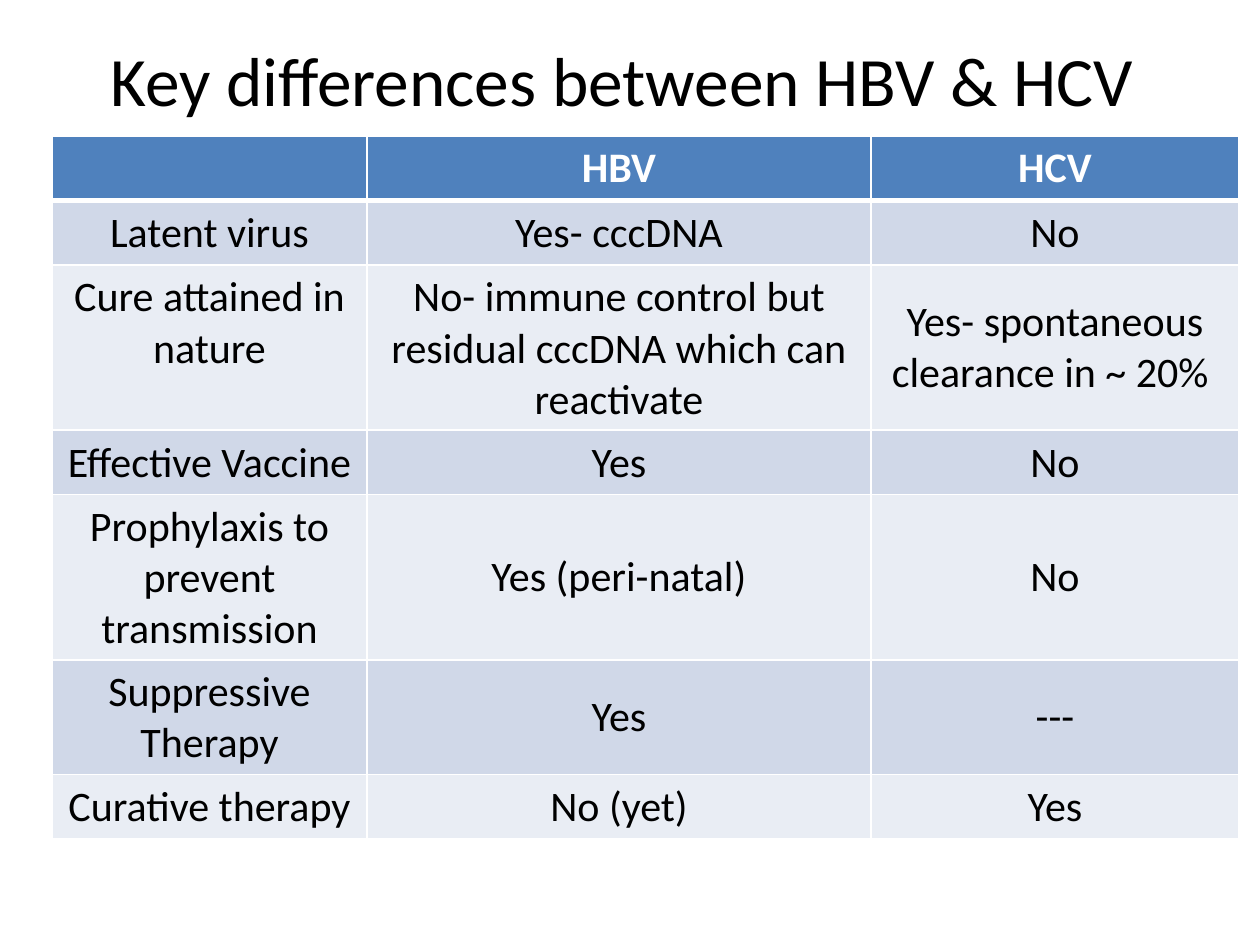
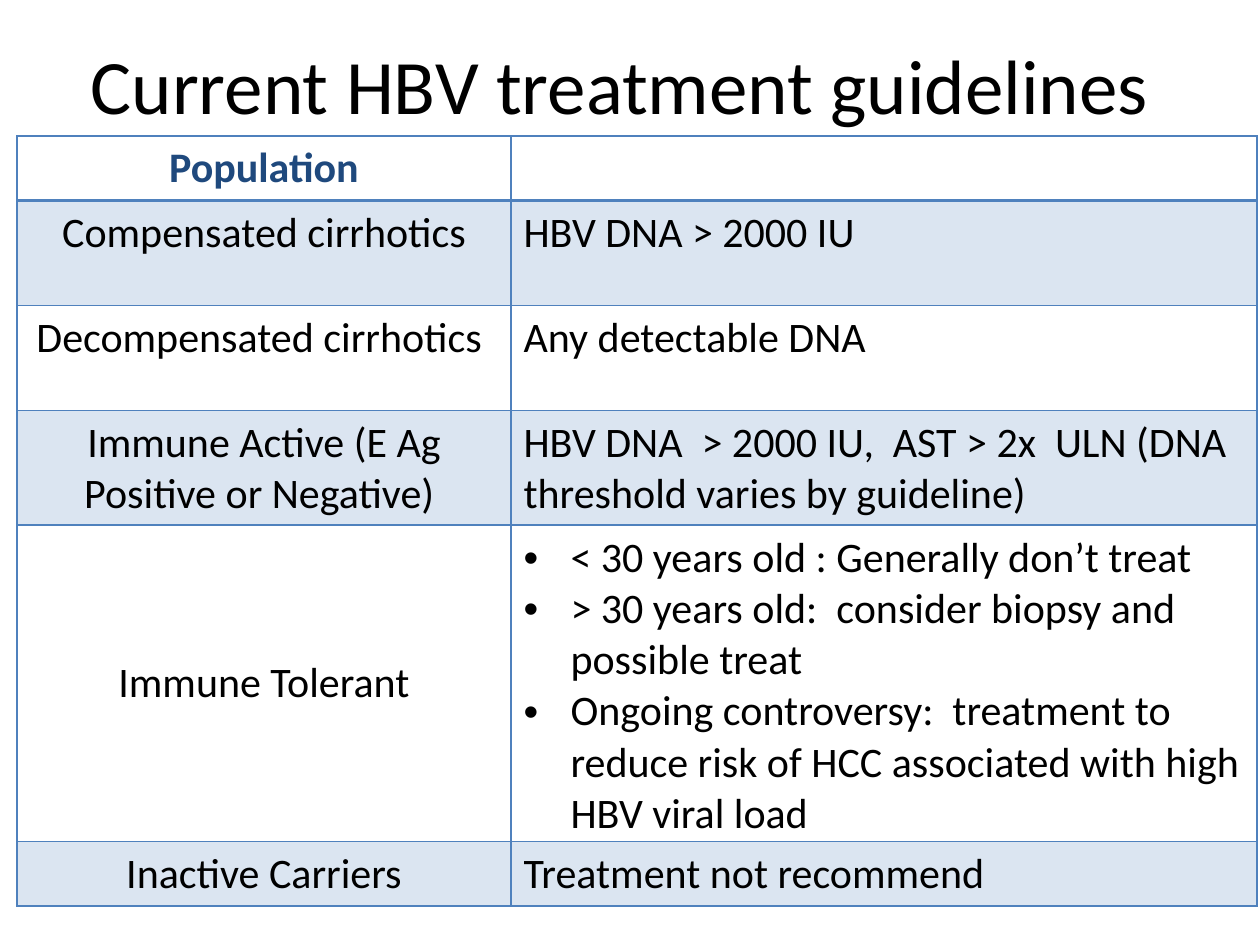
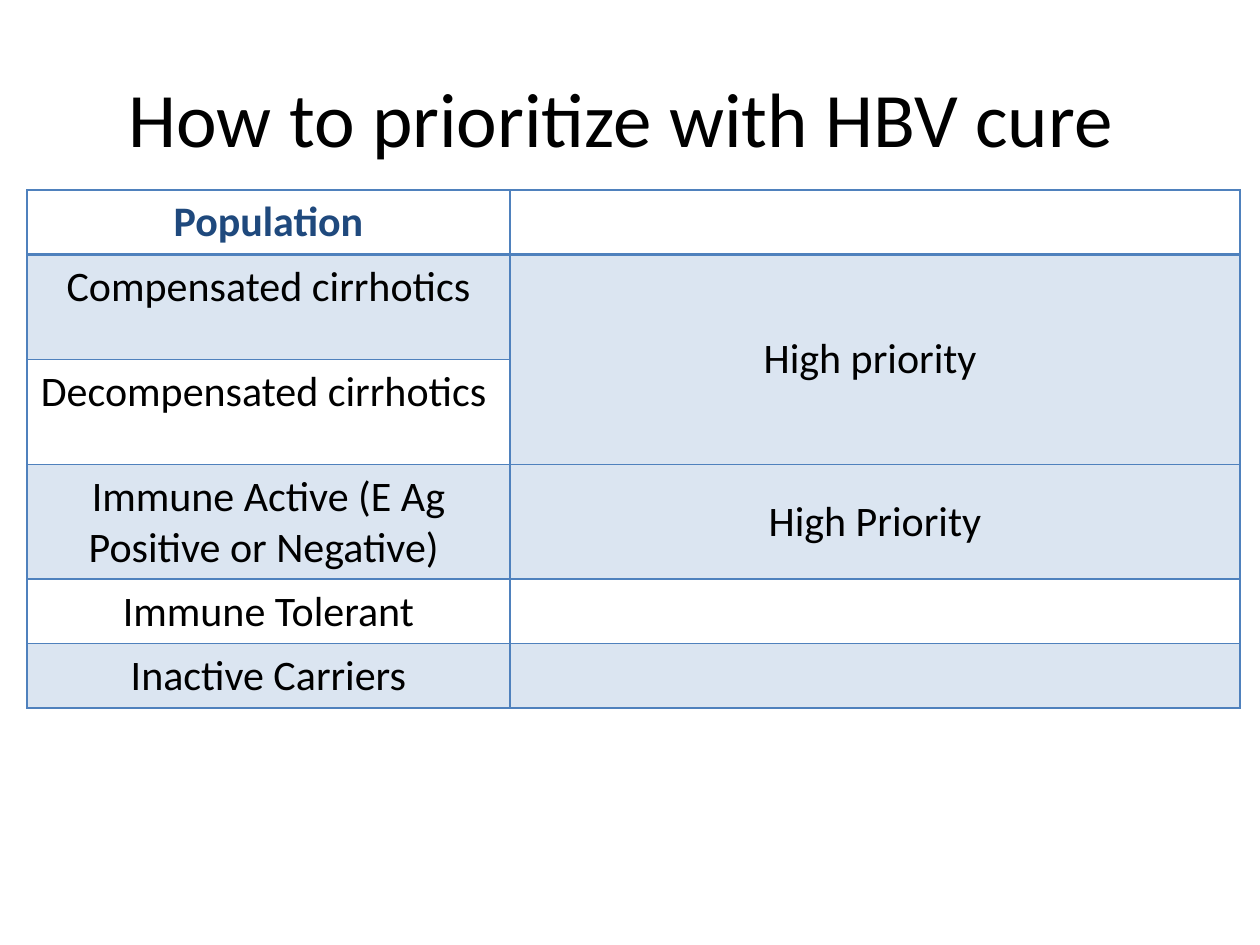
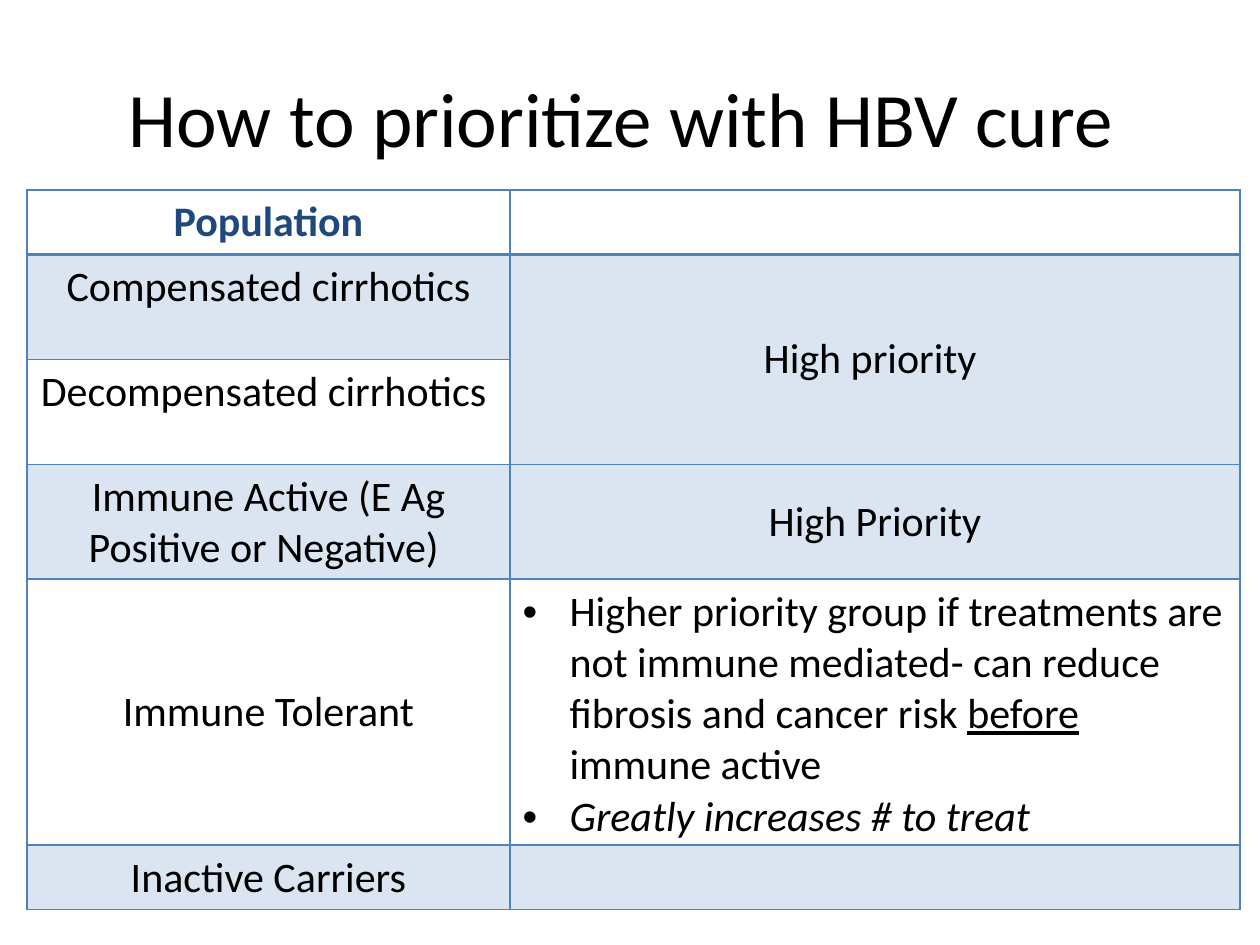
from dataclasses import dataclass

from lxml import etree
from pptx import Presentation
from pptx.dml.color import RGBColor
from pptx.enum.text import MSO_ANCHOR, PP_ALIGN
from pptx.oxml.ns import qn
from pptx.util import Emu, Pt

TOP, MIDDLE = MSO_ANCHOR.TOP, MSO_ANCHOR.MIDDLE
LEFT, CENTER = PP_ALIGN.LEFT, PP_ALIGN.CENTER

FONT = "Calibri"
BODY_SIZE = 24
TITLE_SIZE = 44
PX_PER_INCH = 126
ROW, TALL_ROW, BULLET_INDENT, CELL_MARGIN = 52, 105, 47, 7
NO_TABLE_STYLE = "{2D5ABB26-0587-4C30-8999-92F81FD0307C}"
COLORS = {
    "text": "000000",
    "white": "FFFFFF",
    "blue": "4F81BD",
    "navy": "1F497D",
    "band_dark": "D0D8E8",
    "band_light": "E9EDF4",
}


@dataclass
class Look:
    """Colours and header rule of a table; a fill is (colour, opacity %) or None."""
    border: str
    header_text: str
    header_fill: tuple
    bands: tuple
    header_rule: int


@dataclass
class Entry:
    """Content of one cell; bullets are lists of (text, style) runs."""
    text: str = ""
    align: int = CENTER
    anchor: int = TOP
    bullets: tuple = ()


FILLED = Look("white", "white", ("blue", 100),
              (("band_dark", 100), ("band_light", 100)), 3)
OUTLINED = Look("blue", "navy", None, (("blue", 20), None), 2)


def px(length):
    return Emu(round(length * 914400 / PX_PER_INCH))


def rgb(name):
    return RGBColor.from_string(COLORS[name])


def format_run(run, size, color="text", bold=False):
    run.font.name = FONT
    run.font.size = Pt(size)
    run.font.bold = bold
    run.font.color.rgb = rgb(color)


# Titles

def add_title(slide, text, left, top, size=TITLE_SIZE):
    frame = slide.shapes.add_textbox(px(left), px(top), px(1134), px(158)).text_frame
    frame.word_wrap = True
    frame.vertical_anchor = MIDDLE
    frame.text = text
    frame.paragraphs[0].alignment = CENTER
    format_run(frame.paragraphs[0].runs[0], size)


# Table cells

def set_borders(cell, color, widths):
    properties = cell._tc.get_or_add_tcPr()
    for side, width in zip("LRTB", widths):
        line = etree.SubElement(properties, qn(f"a:ln{side}"), w=str(Pt(width)))
        fill = etree.SubElement(line, qn("a:solidFill"))
        etree.SubElement(fill, qn("a:srgbClr"), val=COLORS[color])


def set_fill(cell, fill):
    if fill is None:
        cell.fill.background()
        return
    color, opacity = fill
    cell.fill.solid()
    cell.fill.fore_color.rgb = rgb(color)
    if opacity < 100:
        srgb = cell._tc.tcPr.find(qn("a:solidFill") + "/" + qn("a:srgbClr"))
        etree.SubElement(srgb, qn("a:alpha"), val=str(opacity * 1000))


def add_bullet(paragraph, runs):
    properties = paragraph._p.get_or_add_pPr()
    properties.set("marL", str(px(BULLET_INDENT)))
    properties.set("indent", str(-px(BULLET_INDENT)))
    etree.SubElement(properties, qn("a:buFont"), typeface="Arial")
    etree.SubElement(properties, qn("a:buChar"), char="•")
    for text, style in runs:
        run = paragraph.add_run()
        run.text = text
        format_run(run, BODY_SIZE)
        run.font.underline = style == "underline"
        run.font.italic = style == "italic"


def write_entry(cell, entry, color, bold):
    frame = cell.text_frame
    cell.vertical_anchor = entry.anchor
    cell.margin_top = cell.margin_bottom = px(CELL_MARGIN)
    for number, runs in enumerate(entry.bullets):
        add_bullet(frame.add_paragraph() if number else frame.paragraphs[0], runs)
    if entry.text:
        frame.text = entry.text
        frame.paragraphs[0].alignment = entry.align
        format_run(frame.paragraphs[0].runs[0], BODY_SIZE, color, bold)


# Tables

def add_grid(slide, left, top, height, columns, row_heights, entries, look):
    frame = slide.shapes.add_table(len(entries), len(columns), px(left), px(top),
                                   px(sum(columns)), px(height))
    table = frame.table
    table.horz_banding = False
    table._tbl.tblPr.find(qn("a:tableStyleId")).text = NO_TABLE_STYLE
    for column, width in zip(table.columns, columns):
        column.width = px(width)
    for row, row_height in zip(table.rows, row_heights):
        row.height = px(row_height)
    frame.height = px(height)

    for r, row_entries in enumerate(entries):
        header = r == 0
        fill = look.header_fill if header else look.bands[(r - 1) % 2]
        above = look.header_rule if r == 1 else 1
        below = look.header_rule if header else 1
        for c, entry in enumerate(row_entries):
            cell = table.cell(r, c)
            set_borders(cell, look.border, (1, 1, above, below))
            set_fill(cell, fill)
            write_entry(cell, entry, look.header_text if header else "text", header)
    return table


def add_population_grid(slide, left, top, height, columns, guidance):
    populations = [
        Entry("Population"),
        Entry("Compensated cirrhotics"),
        Entry("Decompensated cirrhotics "),
        Entry("Immune Active (E Ag Positive or Negative) "),
        Entry("Immune Tolerant", anchor=MIDDLE),
        Entry("Inactive Carriers", anchor=MIDDLE),
    ]
    row_heights = [ROW, TALL_ROW, TALL_ROW, ROW, ROW, ROW]
    entries = list(zip(populations, [Entry()] + guidance))
    return add_grid(slide, left, top, height, columns, row_heights, entries, OUTLINED)


# Slides

def build_differences(slide):
    add_title(slide, "Key differences between HBV & HCV ", 63, 0, 39.6)
    comparison = [
        ("Latent virus", "Yes- cccDNA", "No"),
        ("Cure attained in nature",
         "No- immune control but residual cccDNA which can reactivate",
         "Yes- spontaneous clearance in ~ 20% "),
        ("Effective Vaccine", "Yes", "No"),
        ("Prophylaxis to prevent transmission", "Yes (peri-natal)", "No"),
        ("Suppressive Therapy", "Yes", "---"),
        ("Curative therapy", "No (yet)", "Yes"),
    ]
    entries = [[Entry(), Entry("HBV"), Entry("HCV")]]
    for feature, *answers in comparison:
        entries.append([Entry(feature)] + [Entry(a, anchor=MIDDLE) for a in answers])
    add_grid(slide, 52, 136, 693, [315, 504, 368], [ROW] * len(entries), entries, FILLED)


def build_guidelines(slide):
    add_title(slide, "Current HBV treatment guidelines", 53, 5)
    tolerant_advice = [
        "< 30 years old : Generally don’t treat",
        "> 30 years old:  consider biopsy and possible treat",
        "Ongoing controversy:  treatment to reduce risk of HCC associated "
        "with high HBV viral load",
    ]
    guidance = [
        Entry("HBV DNA > 2000 IU", LEFT),
        Entry("Any detectable DNA", LEFT),
        Entry("HBV DNA  > 2000 IU,  AST > 2x  ULN (DNA threshold varies by guideline)",
              LEFT),
        Entry(anchor=MIDDLE, bullets=[[(advice, None)] for advice in tolerant_advice]),
        Entry("Treatment not recommend", LEFT, MIDDLE),
    ]
    add_population_grid(slide, 17, 136, 765, [494, 746], guidance)


def build_priorities(slide, height, tolerant):
    add_title(slide, "How to prioritize with HBV cure ", 63, 38)
    guidance = [
        Entry("High priority ", anchor=MIDDLE),
        Entry(),
        Entry("High Priority", anchor=MIDDLE),
        tolerant,
        Entry(),
    ]
    table = add_population_grid(slide, 27, 190, height, [483, 730], guidance)
    table.cell(1, 1).merge(table.cell(2, 1))


def main():
    deck = Presentation()
    deck.slide_width, deck.slide_height = px(1260), px(945)
    blank = deck.slide_layouts[6]
    tolerant_priority = Entry(anchor=MIDDLE, bullets=[
        [("Higher priority group if treatments are not immune mediated- can reduce "
          "fibrosis and cancer risk ", None),
         ("before", "underline"),
         (" immune active", None)],
        [("Greatly increases # to treat", "italic")],
    ])

    build_differences(deck.slides.add_slide(blank))
    build_guidelines(deck.slides.add_slide(blank))
    build_priorities(deck.slides.add_slide(blank), 513, Entry())
    build_priorities(deck.slides.add_slide(blank), 714, tolerant_priority)
    deck.save("out.pptx")


if __name__ == "__main__":
    main()
